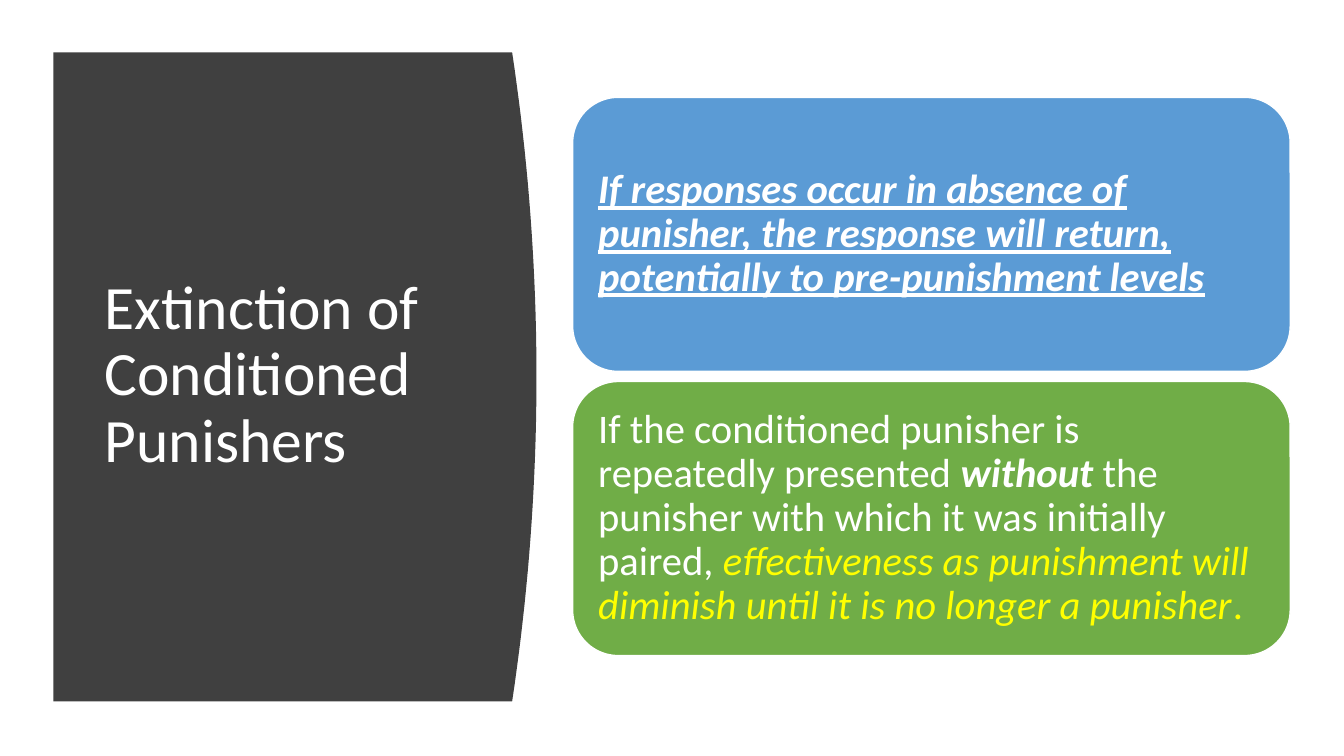
from dataclasses import dataclass

from pptx import Presentation
from pptx.dml.color import RGBColor
from pptx.enum.shapes import MSO_SHAPE
from pptx.enum.text import MSO_ANCHOR, PP_ALIGN
from pptx.util import Pt

ROUNDED = MSO_SHAPE.ROUNDED_RECTANGLE
MIDDLE = MSO_ANCHOR.MIDDLE
LEFT = PP_ALIGN.LEFT

COLORS = {
    "panel": "404040",
    "blue": "5B9BD5",
    "green": "70AD47",
    "white": "FFFFFF",
    "yellow": "FFFF00",
}
FONT = "Calibri"

PANEL_LEFT, PANEL_TOP, PANEL_EDGE, PANEL_BOTTOM = 38.2, 37.4, 365.8, 501.1
PANEL_BULGE = 17.4
CURVE_STEPS = 40

CARD_LEFT, CARD_TOP, CARD_WIDTH, CARD_HEIGHT = 409, 69.5, 512.6, 195.8
CARD_PITCH = 203


@dataclass
class Run:
    text: str
    color: str = "white"
    bold: bool = False
    italic: bool = False
    underline: bool = False


@dataclass
class Card:
    fill: str
    runs: list[Run]


CARDS = [
    Card("blue", [
        Run("If responses occur in absence of punisher, the response will return, "
            "potentially to pre-punishment levels",
            bold=True, italic=True, underline=True),
    ]),
    Card("green", [
        Run("If the conditioned punisher is repeatedly presented "),
        Run("without", bold=True, italic=True),
        Run(" the punisher with which it was initially paired, "),
        Run("effectiveness as punishment will diminish until it is no longer a punisher",
            color="yellow", italic=True),
        Run(".", color="yellow"),
    ]),
]


def rgb(name: str) -> RGBColor:
    return RGBColor.from_string(COLORS[name])


def write_text(sp, runs: list[Run], *, size: float, inset_x: float, inset_y: float) -> None:
    tf = sp.text_frame
    tf.word_wrap = True
    tf.vertical_anchor = MIDDLE
    tf.margin_left = tf.margin_right = Pt(inset_x)
    tf.margin_top = tf.margin_bottom = Pt(inset_y)
    p = tf.paragraphs[0]
    p.alignment = LEFT
    p.line_spacing = 0.9
    for run in runs:
        r = p.add_run()
        r.text = run.text
        r.font.name = FONT
        r.font.size = Pt(size)
        r.font.color.rgb = rgb(run.color)
        r.font.bold = run.bold
        r.font.italic = run.italic
        r.font.underline = run.underline


def add_panel(s) -> None:
    """Draw the dark panel, whose right side bulges as a parabola."""
    height = PANEL_BOTTOM - PANEL_TOP
    curve = []
    for step in range(CURVE_STEPS + 1):
        t = step / CURVE_STEPS
        x = PANEL_EDGE + PANEL_BULGE * 4 * t * (1 - t)
        curve.append((Pt(x), Pt(PANEL_TOP + height * t)))
    builder = s.shapes.build_freeform(Pt(PANEL_LEFT), Pt(PANEL_TOP))
    builder.add_line_segments(curve + [(Pt(PANEL_LEFT), Pt(PANEL_BOTTOM))], close=True)
    sp = builder.convert_to_shape()
    sp.shadow.inherit = False
    sp.fill.solid()
    sp.fill.fore_color.rgb = rgb("panel")
    sp.line.fill.background()


def add_title(s, text: str) -> None:
    sp = s.shapes.add_textbox(Pt(67.7), Pt(79.9), Pt(269.3), Pt(377.3))
    write_text(sp, [Run(text)], size=44, inset_x=7.2, inset_y=3.6)


def add_card(s, card: Card, top: float) -> None:
    sp = s.shapes.add_shape(ROUNDED, Pt(CARD_LEFT), Pt(top), Pt(CARD_WIDTH), Pt(CARD_HEIGHT))
    sp.shadow.inherit = False
    sp.fill.solid()
    sp.fill.fore_color.rgb = rgb(card.fill)
    sp.line.color.rgb = rgb("white")
    sp.line.width = Pt(1)
    write_text(sp, card.runs, size=29, inset_x=8.7, inset_y=8.7)


def main() -> None:
    prs = Presentation()
    prs.slide_width, prs.slide_height = Pt(960), Pt(540)
    s = prs.slides.add_slide(prs.slide_layouts[6])
    add_panel(s)
    add_title(s, "Extinction of Conditioned Punishers")
    for i, card in enumerate(CARDS):
        add_card(s, card, CARD_TOP + i * CARD_PITCH)
    prs.save("out.pptx")


if __name__ == "__main__":
    main()
